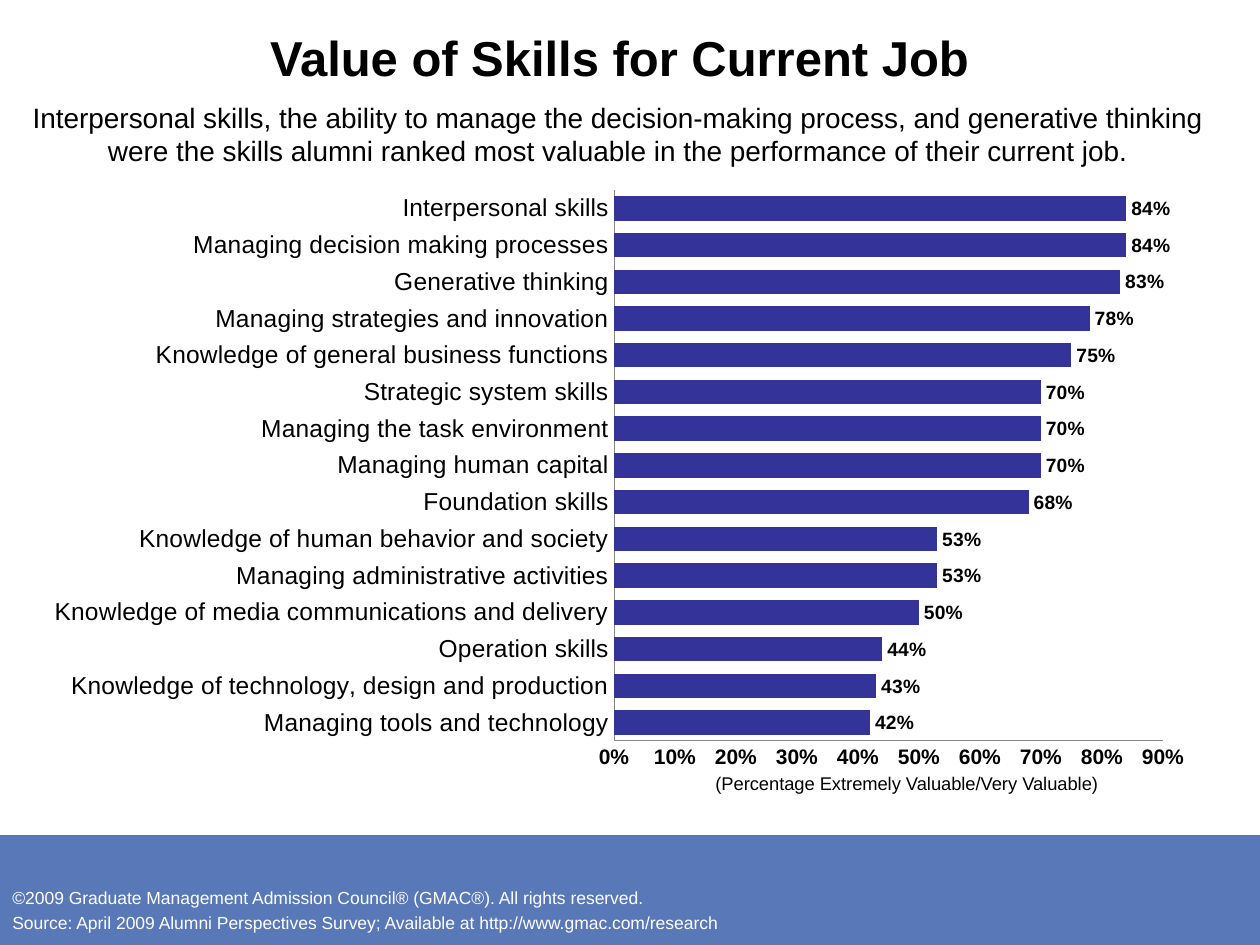
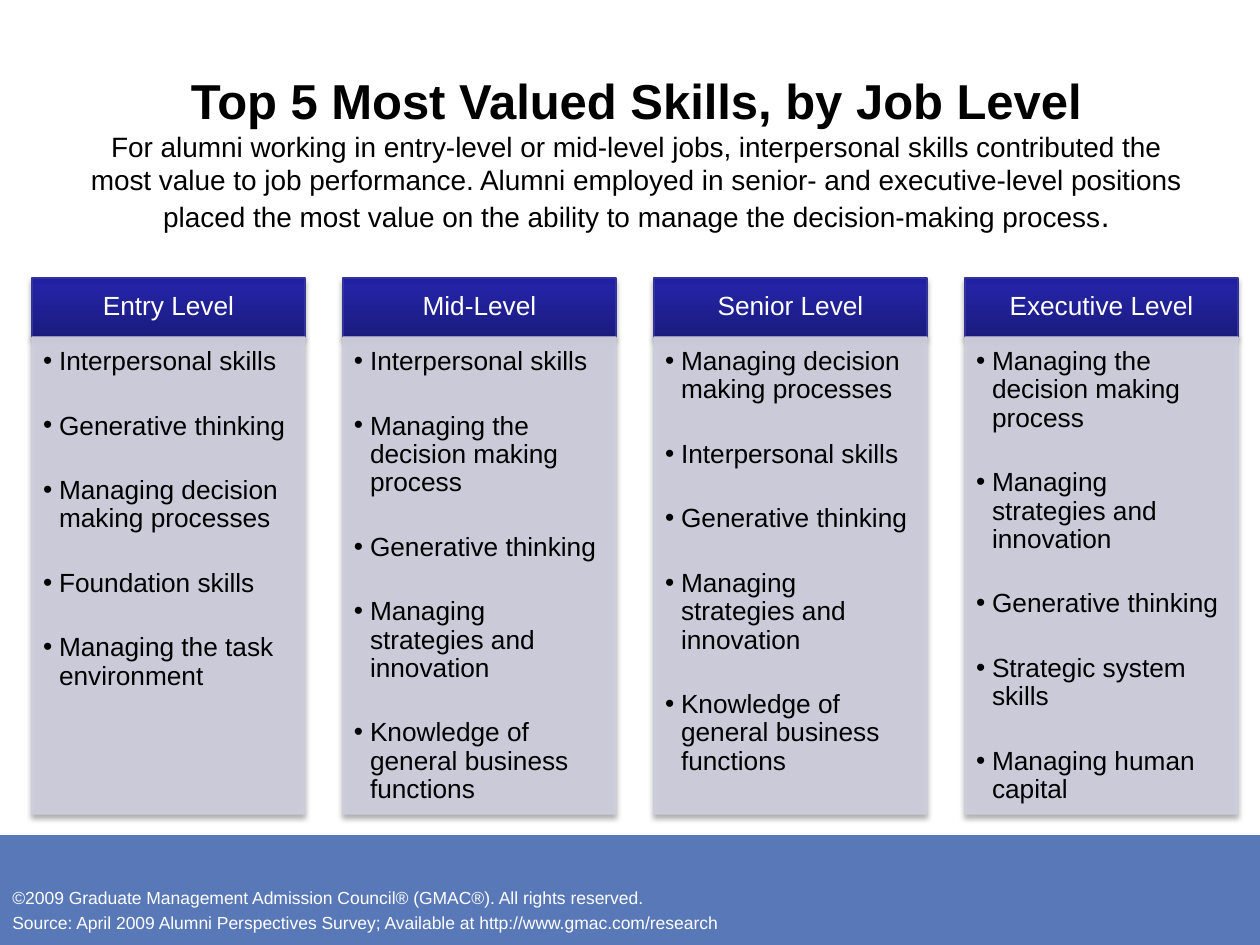
from typing import NamedTuple

from lxml import etree
from pptx import Presentation
from pptx.chart.data import CategoryChartData
from pptx.dml.color import RGBColor
from pptx.enum.chart import XL_CHART_TYPE, XL_LABEL_POSITION, XL_TICK_MARK
from pptx.enum.shapes import MSO_SHAPE
from pptx.enum.text import MSO_ANCHOR, MSO_AUTO_SIZE, PP_ALIGN
from pptx.oxml.ns import qn
from pptx.util import Pt

BAR = XL_CHART_TYPE.BAR_CLUSTERED
OUTER = XL_LABEL_POSITION.OUTSIDE_END
NO_TICK = XL_TICK_MARK.NONE
RECT = MSO_SHAPE.RECTANGLE
TOP, MIDDLE = MSO_ANCHOR.TOP, MSO_ANCHOR.MIDDLE
NO_FIT = MSO_AUTO_SIZE.NONE
LEFT, CENTER = PP_ALIGN.LEFT, PP_ALIGN.CENTER

BLACK = RGBColor(0x00, 0x00, 0x00)
WHITE = RGBColor(0xFF, 0xFF, 0xFF)
BAND = RGBColor(0x59, 0x78, 0xB8)
INDIGO = RGBColor(0x33, 0x33, 0x99)
PALE = RGBColor(0xCE, 0xCE, 0xDE)
GRAY = RGBColor(0x86, 0x86, 0x86)
SHADE = ((0, RGBColor(0x1B, 0x1B, 0x7E)),
         (80, RGBColor(0x23, 0x23, 0xA3)),
         (100, RGBColor(0x20, 0x20, 0xA6)))

FACE = "Arial"
PX = 914400 / 126
WIDE, HIGH = 1260, 945


class Box(NamedTuple):
    x: int
    y: int
    w: int
    h: int

    def emu(self) -> list[int]:
        return [px(n) for n in self]


class Level(NamedTuple):
    name: str
    skills: tuple[str, ...]


FOOTER = (
    "©2009 Graduate Management Admission Council® (GMAC®). All rights reserved.",
    "Source: April 2009 Alumni Perspectives Survey; Available at http://www.gmac.com/research",
)
CLAIM = (
    "Interpersonal skills, the ability to manage the decision-making process, and generative thinking",
    "were the skills alumni ranked most valuable in the performance of their current job.",
)
FINDING = (
    "For alumni working in entry-level or mid-level jobs, interpersonal skills contributed the "
    "most value to job performance. Alumni employed in senior- and executive-level positions "
    "placed the most value on the ability to manage the decision-making process"
)
RATINGS = (
    ("Interpersonal skills", 0.84),
    ("Managing decision making processes", 0.84),
    ("Generative thinking", 0.83),
    ("Managing strategies and innovation", 0.78),
    ("Knowledge of general business functions", 0.75),
    ("Strategic system skills", 0.7),
    ("Managing the task environment", 0.7),
    ("Managing human capital", 0.7),
    ("Foundation skills", 0.68),
    ("Knowledge of human behavior and society", 0.53),
    ("Managing administrative activities", 0.53),
    ("Knowledge of media communications and delivery", 0.5),
    ("Operation skills", 0.44),
    ("Knowledge of technology, design and production", 0.43),
    ("Managing tools and technology", 0.42),
)
LEVELS = (
    Level("Entry Level", (
        "Interpersonal skills", "Generative thinking",
        "Managing decision making processes", "Foundation skills",
        "Managing the task environment")),
    Level("Mid-Level", (
        "Interpersonal skills", "Managing the decision making process",
        "Generative thinking", "Managing strategies and innovation",
        "Knowledge of general business functions")),
    Level("Senior Level", (
        "Managing decision making processes", "Interpersonal skills",
        "Generative thinking", "Managing strategies and innovation",
        "Knowledge of general business functions")),
    Level("Executive Level", (
        "Managing the decision making process",
        "Managing strategies and innovation", "Generative thinking",
        "Strategic system skills", "Managing human capital")),
)

FRAME = Box(32, 179, 1176, 602)
PLOT = Box(614, 190, 549, 551)
CARD = Box(32, 278, 273, 536)
STEP, HEAD = 311, 59


def px(n: int) -> int:
    return round(n * PX)


def style(font, size: float, color: RGBColor = BLACK, bold: bool = False) -> None:
    font.name, font.size, font.bold = FACE, Pt(size), bold
    font.color.rgb = color


def write(frame, lines, size: float, color: RGBColor = BLACK, align=LEFT,
          gap: float = 0, bullet: bool = False) -> None:
    """Fill a text frame with one paragraph a line, gap points apart."""
    for i, line in enumerate(lines):
        para = frame.add_paragraph() if i else frame.paragraphs[0]
        para.text, para.alignment = line, align
        if i and gap:
            para.space_before = Pt(gap)
        if bullet:
            props = para._p.get_or_add_pPr()
            props.set("marL", str(px(16)))
            props.set("indent", str(px(-16)))
            etree.SubElement(props, qn("a:buFont"), typeface=FACE)
            etree.SubElement(props, qn("a:buChar"), char="•")
        style(para.font, size, color)


def add_text(slide, box: Box, lines, size: float, wrap: bool = True, **look) -> None:
    frame = slide.shapes.add_textbox(*box.emu()).text_frame
    frame.word_wrap = wrap
    write(frame, lines, size, **look)


def add_rect(slide, box: Box):
    shape = slide.shapes.add_shape(RECT, *box.emu())
    shape.shadow.inherit = False
    return shape


def set_title(slide, box: Box, text: str):
    title = slide.shapes.title
    title.left, title.top, title.width, title.height = box.emu()
    frame = title.text_frame
    frame.auto_size, frame.word_wrap = NO_FIT, True
    frame.vertical_anchor = TOP
    frame.text = text
    para = frame.paragraphs[0]
    para.alignment = CENTER
    style(para.font, 28, bold=True)
    return frame


def add_footer(slide) -> None:
    band = add_rect(slide, Box(0, 835, WIDE, 110))
    band.fill.solid()
    band.fill.fore_color.rgb = BAND
    band.line.fill.background()
    add_text(slide, Box(0, 881, 741, 59), FOOTER, 10, wrap=False, color=WHITE, gap=2)


def add_alpha(node, percent: int) -> None:
    etree.SubElement(node, qn("a:alpha"), val=str(percent * 1000))


def add_color(node, color: RGBColor):
    return etree.SubElement(node, qn("a:srgbClr"), val=str(color))


def drop_shadow(shape) -> None:
    effects = shape._element.spPr.find(qn("a:effectLst"))
    shadow = etree.SubElement(effects, qn("a:outerShdw"), blurRad=str(Pt(3.1)),
                              dist=str(Pt(1.8)), dir="5400000", rotWithShape="0")
    add_alpha(add_color(shadow, BLACK), 35)


def shade(shape) -> None:
    """Give the shape the three-stop gradient, rising from its foot."""
    shape.fill.gradient()
    shape.fill.gradient_angle = 90
    stops = shape._element.spPr.find(".//" + qn("a:gsLst"))
    stops.clear()
    for at, color in SHADE:
        add_color(etree.SubElement(stops, qn("a:gs"), pos=str(at * 1000)), color)


def add_part(slide, box: Box, edge: RGBColor, pads: tuple[int, ...], anchor):
    """Add one half of a card: a bordered, shadowed box with its margins."""
    part = add_rect(slide, box)
    part.line.color.rgb = edge
    part.line.width = Pt(0.75)
    drop_shadow(part)
    frame = part.text_frame
    frame.word_wrap, frame.vertical_anchor = True, anchor
    (frame.margin_left, frame.margin_top,
     frame.margin_right, frame.margin_bottom) = map(px, pads)
    return part


def add_card(slide, box: Box, level: Level) -> None:
    head = add_part(slide, box._replace(h=HEAD), INDIGO, (15, 9, 15, 9), MIDDLE)
    shade(head)
    write(head.text_frame, [level.name], 15, WHITE, CENTER)
    head.text_frame.paragraphs[0].line_spacing = 0.9

    body = add_part(slide, Box(box.x, box.y + HEAD, box.w, box.h - HEAD),
                    PALE, (11, 11, 15, 16), TOP)
    body.fill.solid()
    body.fill.fore_color.rgb = PALE
    for color in body._element.spPr.findall(".//" + qn("a:solidFill") + "/" + qn("a:srgbClr")):
        add_alpha(color, 90)
    write(body.text_frame, level.skills, 15, gap=20.6, bullet=True)
    for para in body.text_frame.paragraphs:
        para.line_spacing = 0.9


def place_plot(chart) -> None:
    """Pin the inner plot area to PLOT within FRAME."""
    area = chart._chartSpace.chart.plotArea
    layout = area.find(qn("c:layout"))
    if layout is None:
        layout = etree.Element(qn("c:layout"))
        area.insert(0, layout)
    manual = etree.SubElement(layout, qn("c:manualLayout"))
    parts = {"layoutTarget": "inner", "xMode": "edge", "yMode": "edge",
             "x": (PLOT.x - FRAME.x) / FRAME.w, "y": (PLOT.y - FRAME.y) / FRAME.h,
             "w": PLOT.w / FRAME.w, "h": PLOT.h / FRAME.h}
    for tag, val in parts.items():
        etree.SubElement(manual, qn("c:" + tag), val=str(val))


def add_bars(slide) -> None:
    names, values = zip(*reversed(RATINGS))
    data = CategoryChartData(number_format="0%")
    data.categories = names
    data.add_series("Series 1", values)
    chart = slide.shapes.add_chart(BAR, *FRAME.emu(), data).chart
    chart.has_legend = chart.has_title = False
    style(chart.font, 10)
    place_plot(chart)

    plot = chart.plots[0]
    plot.gap_width, plot.vary_by_categories = 50, False
    bars = plot.series[0].format.fill
    bars.solid()
    bars.fore_color.rgb = INDIGO
    plot.has_data_labels = True
    labels = plot.data_labels
    labels.show_value, labels.position = True, OUTER
    labels.number_format, labels.number_format_is_linked = "0%", False
    style(labels.font, 11, bold=True)

    scale = chart.value_axis
    for axis, size in ((chart.category_axis, 14), (scale, 12)):
        axis.major_tick_mark = axis.minor_tick_mark = NO_TICK
        axis.has_major_gridlines = False
        axis.format.line.color.rgb = GRAY
        axis.format.line.width = Pt(0.5)
        style(axis.tick_labels.font, size, bold=axis is scale)
    scale.minimum_scale, scale.maximum_scale, scale.major_unit = 0, 0.9, 0.1
    scale.tick_labels.number_format = "0%"
    scale.tick_labels.number_format_is_linked = False


def draw_value(slide) -> None:
    add_bars(slide)
    add_text(slide, Box(8, 94, 1220, 80), CLAIM, 16, wrap=False, align=CENTER)
    set_title(slide, Box(0, 21, 1239, 72), "Value of Skills for Current Job")
    add_text(slide, Box(703, 766, 420, 35),
             ["(Percentage Extremely Valuable/Very Valuable)"], 10.5)


def draw_levels(slide) -> None:
    frame = set_title(slide, Box(65, 64, 1143, 190), "Top 5 Most Valued Skills, by Job Level")
    para = frame.add_paragraph()
    para.alignment = CENTER
    style(para.font, 16)
    para.add_run().text = FINDING
    stop = para.add_run()
    stop.text, stop.font.size = ".", Pt(18)
    for i, level in enumerate(LEVELS):
        add_card(slide, CARD._replace(x=CARD.x + i * STEP), level)


def main() -> None:
    deck = Presentation()
    deck.slide_width, deck.slide_height = px(WIDE), px(HIGH)
    for draw in (draw_value, draw_levels):
        slide = deck.slides.add_slide(deck.slide_layouts[5])
        add_footer(slide)
        draw(slide)
    deck.save("out.pptx")


if __name__ == "__main__":
    main()
